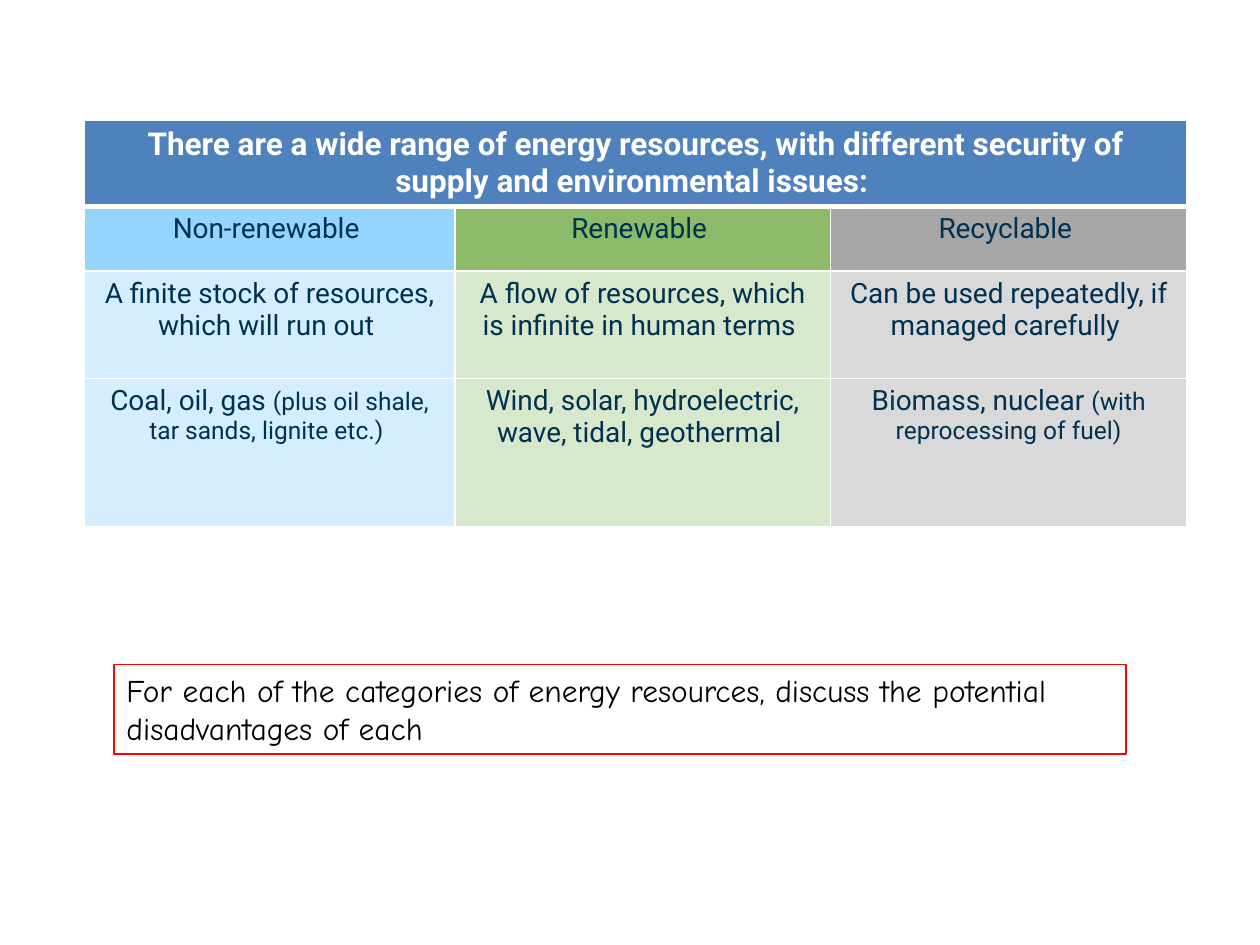
"""Build a slide comparing categories of energy resources, with a discussion task."""
from lxml import etree
from pptx import Presentation
from pptx import util as u
from pptx.dml.color import RGBColor
from pptx.enum import shapes, text
from pptx.oxml import ns

COLORS = {
    "white": "FFFFFF", "black": "000000", "red": "FF0000", "navy": "003150",
    "header": "4F81BD", "blue": "94D5FF", "green": "8BBA68", "grey": "A6A6A6",
    "pale_blue": "D4EEFF", "pale_green": "D8E8CC", "pale_grey": "D9D9D9",
}
HEADING = ("There are a wide range of energy resources, with different "
           "security of supply and environmental issues: ")
TASK = ("For each of the categories of energy resources, discuss the "
        "potential disadvantages of each")
CATEGORIES = [
    {"fills": ("blue", "pale_blue"), "width": 7.47, "cells": [
        [("Non-renewable ", 16)],
        [("A finite stock of resources, which will run out ", 16)],
        [("Coal, oil, gas ", 16), ("(plus oil shale, tar sands, lignite etc.) ", 14)]]},
    {"fills": ("green", "pale_green"), "width": 7.57, "cells": [
        [("Renewable ", 16)],
        [("A flow of resources, which is infinite in human terms ", 16)],
        [("Wind, solar, hydroelectric, wave, tidal, geothermal ", 16)]]},
    {"fills": ("grey", "pale_grey"), "width": 7.19, "cells": [
        [("Recyclable ", 16)],
        [("Can be used repeatedly, if managed carefully ", 16)],
        [("Biomass, nuclear ", 16), ("(with reprocessing of fuel)", 14)]]},
]
ROW_HEIGHTS = [1.3, 1.3, 2.16, 3]


def rgb(name):
    return RGBColor.from_string(COLORS[name])


def paint(item, color):
    item.fill.solid()
    item.fill.fore_color.rgb = rgb(color)


def write(frame, runs, font, color, alignment, bold=False):
    paragraph = frame.paragraphs[0]
    paragraph.alignment = alignment
    for words, size in runs:
        run = paragraph.add_run()
        run.text = words
        run.font.name = font
        run.font.size = u.Pt(size)
        run.font.bold = bold
        run.font.color.rgb = rgb(color)


def add_borders(cell, row):
    properties = cell._tc.get_or_add_tcPr()
    widths = {"L": 1, "R": 1, "T": 3 if row == 1 else 1, "B": 3 if row == 0 else 1}
    for position, (side, width) in enumerate(widths.items()):
        line = etree.Element(ns.qn(f"a:ln{side}"), w=str(u.Pt(width)))
        fill = etree.SubElement(line, ns.qn("a:solidFill"))
        etree.SubElement(fill, ns.qn("a:srgbClr"), val=COLORS["white"])
        properties.insert(position, line)


def add_resource_table(slide):
    widths = [category["width"] for category in CATEGORIES]
    table = slide.shapes.add_table(
        len(ROW_HEIGHTS), len(widths), u.Cm(1.7), u.Cm(2.42),
        u.Cm(sum(widths)), u.Cm(sum(ROW_HEIGHTS))).table
    for row, height in zip(table.rows, ROW_HEIGHTS):
        row.height = u.Cm(height)
    heading = table.cell(0, 0)
    heading.merge(table.cell(0, len(widths) - 1))
    write(heading.text_frame, [(HEADING, 18)], "Roboto", "white",
          text.PP_ALIGN.CENTER, bold=True)
    for column, category in enumerate(CATEGORIES):
        table.columns[column].width = u.Cm(category["width"])
        strong, pale = category["fills"]
        for row, fill in enumerate(["header", strong, pale, pale]):
            cell = table.cell(row, column)
            paint(cell, fill)
            add_borders(cell, row)
            if row:
                write(cell.text_frame, category["cells"][row - 1], "Roboto",
                      "navy", text.PP_ALIGN.CENTER)


def add_task(slide):
    box = slide.shapes.add_shape(shapes.MSO_SHAPE.RECTANGLE, u.Cm(2.3), u.Cm(13.4),
                                 u.Cm(20.4), u.Cm(1.8))
    box.shadow.inherit = False
    paint(box, "white")
    box.line.color.rgb = rgb("red")
    box.line.width = u.Pt(0.75)
    frame = box.text_frame
    frame.word_wrap = True
    frame.auto_size = text.MSO_AUTO_SIZE.SHAPE_TO_FIT_TEXT
    frame.vertical_anchor = text.MSO_ANCHOR.TOP
    write(frame, [(TASK, 18)], "Comic Neue", "black", text.PP_ALIGN.LEFT)


def main():
    presentation = Presentation()
    presentation.slide_width, presentation.slide_height = u.Cm(25.4), u.Cm(19.05)
    slide = presentation.slides.add_slide(presentation.slide_layouts[6])
    add_resource_table(slide)
    add_task(slide)
    presentation.save("out.pptx")


if __name__ == "__main__":
    main()
